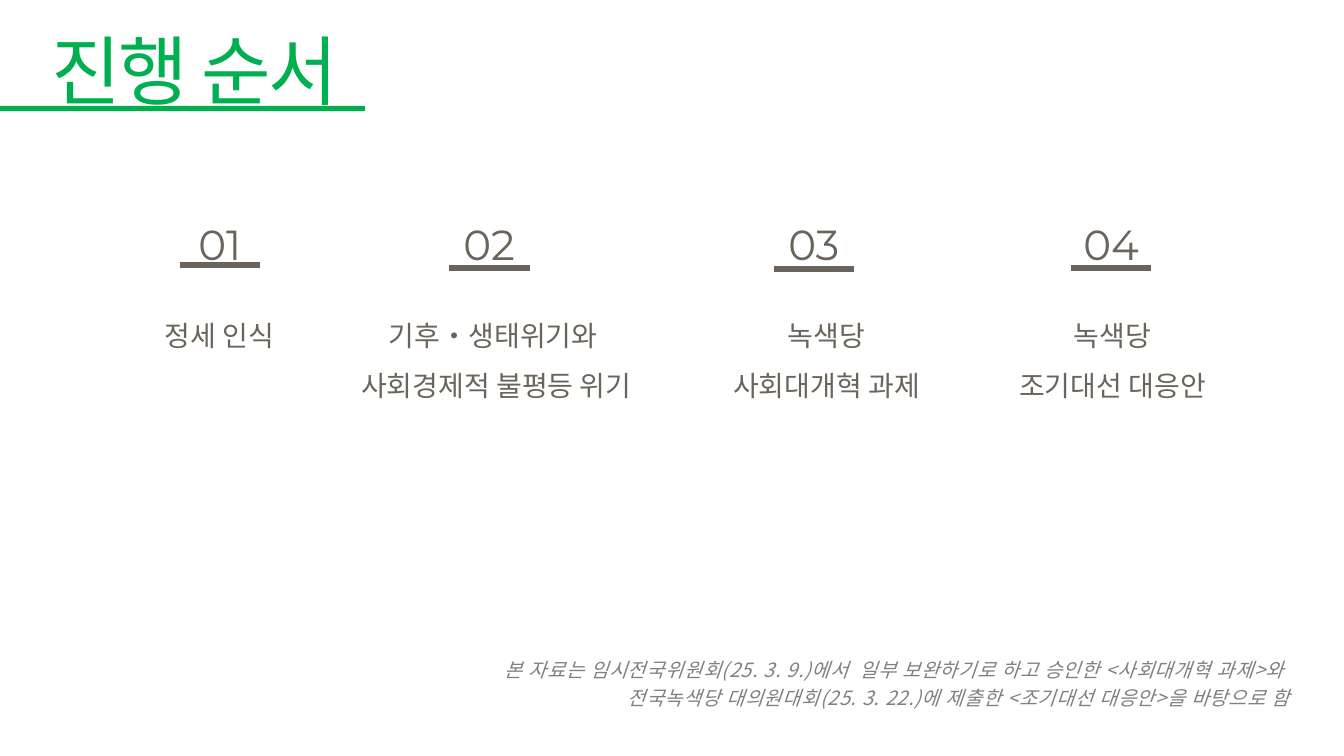
from lxml.etree import SubElement as Sub
from pptx import Presentation
from pptx.dml.color import RGBColor
from pptx.enum.shapes import MSO_CONNECTOR as Conn, MSO_SHAPE as Shape
from pptx.enum.text import MSO_ANCHOR as Anchor, MSO_AUTO_SIZE as Auto, PP_ALIGN as Align
from pptx.oxml.ns import qn
from pptx.util import Cm, Pt

GREEN, BROWN, GREY = "00B050", "6B645C", "808080"
SANS, MONT = "Noto Sans CJK KR", "Montserrat"

HEAD = dict(size=Pt(54), name=SANS)
NUM = dict(size=Pt(30), name=MONT)
LABEL = dict(size=Pt(20), name=SANS)
NOTE = dict(size=Pt(14), name=SANS, italic=True)

# number, centre of number, height of rule, centre of label, label
STEPS = [
    ("01", 5.54, 6.68, 5.53, "정세 인식"),
    ("02", 12.33, 6.76, 12.51, "기후‧생태위기와 \n사회경제적 불평등 위기"),
    ("03", 20.51, 6.78, 20.83, "녹색당\n사회대개혁 과제"),
    ("04", 28.0, 6.76, 28.04, "녹색당\n조기대선 대응안"),
]
FOOT = ("본 자료는 임시전국위원회(25. 3. 9.)에서  일부 보완하기로 하고 승인한 <사회대개혁 과제>와 \v"
        "전국녹색당 대의원대회(25. 3. 22.)에 제출한 <조기대선 대응안>을 바탕으로 함")


def rgb(code):
    return RGBColor.from_string(code)


def write(shape, text, form, color, align, space=1.0, track=0):
    """Fill a shape with text; track is letter spacing in points."""
    frame = shape.text_frame
    frame.text = text
    for para in frame.paragraphs:
        para.alignment = align
        para.line_spacing = space
        for run in para.runs:
            for key, value in form.items():
                setattr(run.font, key, value)
            run.font.color.rgb = rgb(color)
            props = run.font._element
            Sub(props, qn("a:ea")).set("typeface", form["name"])
            if track:
                props.set("spc", str(int(track * 100)))


def add_title(slide, text):
    title = slide.shapes.title
    title.left, title.top, title.width, title.height = Cm(1.04), Cm(0.48), Cm(8.2), Cm(2.57)
    write(title, text, HEAD, GREEN, Align.LEFT, track=-1.5)
    frame = title.text_frame
    frame.auto_size = Auto.NONE
    frame.word_wrap = False
    frame.vertical_anchor = Anchor.TOP


def add_bar(slide, left, top, width, height, color):
    bar = slide.shapes.add_shape(Shape.RECTANGLE, Cm(left), Cm(top), Cm(width), Cm(height))
    bar.shadow.inherit = False
    bar.fill.solid()
    bar.fill.fore_color.rgb = rgb(color)
    bar.line.fill.background()


def add_text(slide, left, top, width, height, *args, **more):
    box = slide.shapes.add_textbox(Cm(left), Cm(top), Cm(width), Cm(height))
    box.text_frame.word_wrap = True
    write(box, *args, **more)


def add_rule(slide, mid, top, width=2.03):
    left = mid - width / 2
    rule = slide.shapes.add_connector(Conn.STRAIGHT, Cm(left), Cm(top), Cm(left + width), Cm(top))
    rule.line.color.rgb = rgb(BROWN)
    rule.line.width = Pt(4)
    Sub(rule._element.spPr, qn("a:effectLst"))


def add_step(slide, num, mid, line, center, label):
    add_text(slide, mid - 1.43, 5.37, 2.86, 1.54, num, NUM, BROWN, Align.CENTER)
    add_rule(slide, mid, line)
    add_text(slide, center - 3.75, 7.47, 7.5, 2.67, label, LABEL, BROWN, Align.CENTER, space=1.5)


def main():
    deck = Presentation()
    deck.slide_width, deck.slide_height = Cm(33.87), Cm(19.05)
    slide = deck.slides.add_slide(deck.slide_layouts[5])
    add_title(slide, "진행 순서")
    add_bar(slide, 0, 2.67, 9.2, 0.13, GREEN)
    for step in STEPS:
        add_step(slide, *step)
    add_text(slide, 1.63, 16.33, 31.12, 1.65, FOOT, NOTE, GREY, Align.RIGHT, space=1.2, track=0.5)
    deck.save("out.pptx")


if __name__ == "__main__":
    main()
